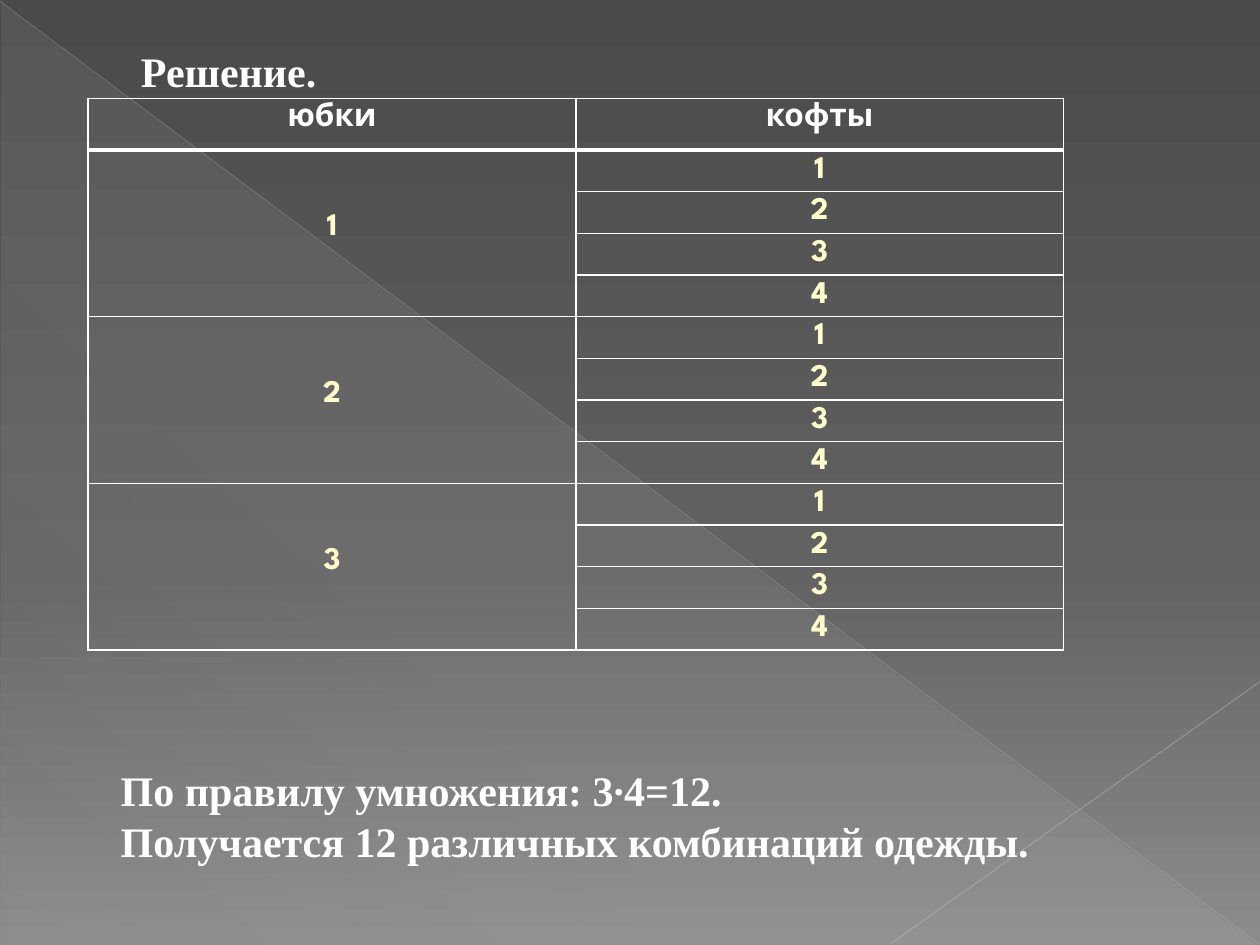
import pptx
import pptx.dml.color
import pptx.enum.shapes
import pptx.enum.text
import pptx.oxml
import pptx.oxml.ns
import pptx.util
from lxml import etree

Inches = pptx.util.Inches
Pt = pptx.util.Pt
qn = pptx.oxml.ns.qn


def colour(value):
    return pptx.dml.color.RGBColor.from_string(value)


def add_colour(parent, value, opacity=100):
    element = etree.SubElement(parent, qn("a:srgbClr"), val=value)
    if opacity < 100:
        etree.SubElement(element, qn("a:alpha"), val=str(opacity * 1000))


class SlideBuilder:
    white = "FFFFFF"
    cream = "FFFFCC"
    text_font = "Times New Roman"
    table_font = "League Spartan"

    def __init__(self, page):
        self.page = page

    def gradient(self, fill, owner, stops, angle):
        fill.gradient()
        gradient = next(owner.iter(qn("a:gradFill")))
        stop_list = gradient.find(qn("a:gsLst"))
        for stop in list(stop_list):
            stop_list.remove(stop)
        for position, value, opacity in stops:
            stop = etree.SubElement(stop_list, qn("a:gs"), pos=str(position * 1000))
            add_colour(stop, value, opacity)
        gradient.find(qn("a:lin")).set("ang", str(angle * 60000))

    def background(self, stops, angle):
        self.gradient(self.page.background.fill, self.page.element, stops, angle)

    def triangle(self, left, top, width, height, stops, angle):
        shape = self.page.shapes.add_shape(
            pptx.enum.shapes.MSO_SHAPE.RIGHT_TRIANGLE,
            Inches(left), Inches(top), Inches(width), Inches(height))
        shape.shadow.inherit = False
        shape.line.fill.background()
        self.gradient(shape.fill, shape.element, stops, angle)

    def line(self, start, end, value, width, opacity):
        connector = self.page.shapes.add_connector(
            pptx.enum.shapes.MSO_CONNECTOR.STRAIGHT,
            *[Inches(length) for length in (*start, *end)])
        connector.line.width = Pt(width)
        connector.line.color.rgb = colour(value)
        line_colour = next(connector.element.iter(qn("a:srgbClr")))
        etree.SubElement(line_colour, qn("a:alpha"), val=str(opacity * 1000))
        etree.SubElement(connector.element.spPr, qn("a:effectLst"))

    def style(self, para, font, size, value):
        para.font.name = font
        para.font.size = Pt(size)
        para.font.bold = True
        para.font.color.rgb = colour(value)

    def text(self, left, top, width, height, lines):
        box = self.page.shapes.add_textbox(
            Inches(left), Inches(top), Inches(width), Inches(height))
        frame = box.text_frame
        frame.word_wrap = True
        frame.auto_size = pptx.enum.text.MSO_AUTO_SIZE.SHAPE_TO_FIT_TEXT
        frame.text = "\n".join(lines)
        for para in frame.paragraphs:
            self.style(para, self.text_font, 24, self.white)

    def cell(self, cell, text, value, top=1, bottom=1):
        properties = cell._tc.get_or_add_tcPr()
        for side, width in (("L", 1), ("R", 1), ("T", top), ("B", bottom)):
            border = etree.SubElement(properties, qn(f"a:ln{side}"), w=str(Pt(width)))
            add_colour(etree.SubElement(border, qn("a:solidFill")), self.white)
        cell.fill.background()
        cell.text = text
        para = cell.text_frame.paragraphs[0]
        para.alignment = pptx.enum.text.PP_ALIGN.CENTER
        self.style(para, self.table_font, 18, value)

    def pairs_table(self, left, top, width, headings, skirts, blouses):
        header_height, row_height = 0.41, 0.33
        count = skirts * blouses
        table = self.page.shapes.add_table(
            count + 1, 2, Inches(left), Inches(top), Inches(width),
            Inches(header_height + count * row_height)).table
        table.first_row = table.horz_banding = False
        for row in table.rows:
            row.height = Inches(row_height)
        table.rows[0].height = Inches(header_height)
        for column, heading in enumerate(headings):
            self.cell(table.cell(0, column), heading, self.white, bottom=3)
        for skirt in range(skirts):
            first = 1 + skirt * blouses
            group = table.cell(first, 0)
            group.merge(table.cell(first + blouses - 1, 0))
            edge = 3 if skirt == 0 else 1
            self.cell(group, str(skirt + 1), self.cream, top=edge)
            group.vertical_anchor = pptx.enum.text.MSO_ANCHOR.MIDDLE
            group.margin_bottom = Inches(0.13)
            for blouse in range(blouses):
                self.cell(table.cell(first + blouse, 1), str(blouse + 1),
                          self.cream, top=edge if blouse == 0 else 1)


def main():
    deck = pptx.Presentation()
    deck.slide_width, deck.slide_height = Inches(10), Inches(7.5)
    slide = SlideBuilder(deck.slides.add_slide(deck.slide_layouts[6]))
    slide.background([(0, "4A4A4A", 100), (60, "626262", 100), (100, "8C8C8C", 100)], 90)
    slide.triangle(0.01, 0.02, 9.98, 7.48,
                   [(0, "D2D2D2", 10), (70, "D2D2D2", 8), (100, "D2D2D2", 1)], 133)
    slide.line((0, 0.01), (9.99, 7.49), "BFBFBF", 0.39, 35)
    slide.line((10, 5.41), (7.07, 7.49), "C6C6C6", 0.47, 45)
    slide.pairs_table(0.7, 0.78, 7.74, ["юбки", "кофты"], 3, 4)
    slide.text(0.86, 6.02, 8.44, 0.91,
               ["По правилу умножения: 3∙4=12.",
                "Получается 12 различных комбинаций одежды."])
    slide.text(1.02, 0.31, 5.39, 0.5, ["Решение."])
    deck.save("out.pptx")


if __name__ == "__main__":
    main()
